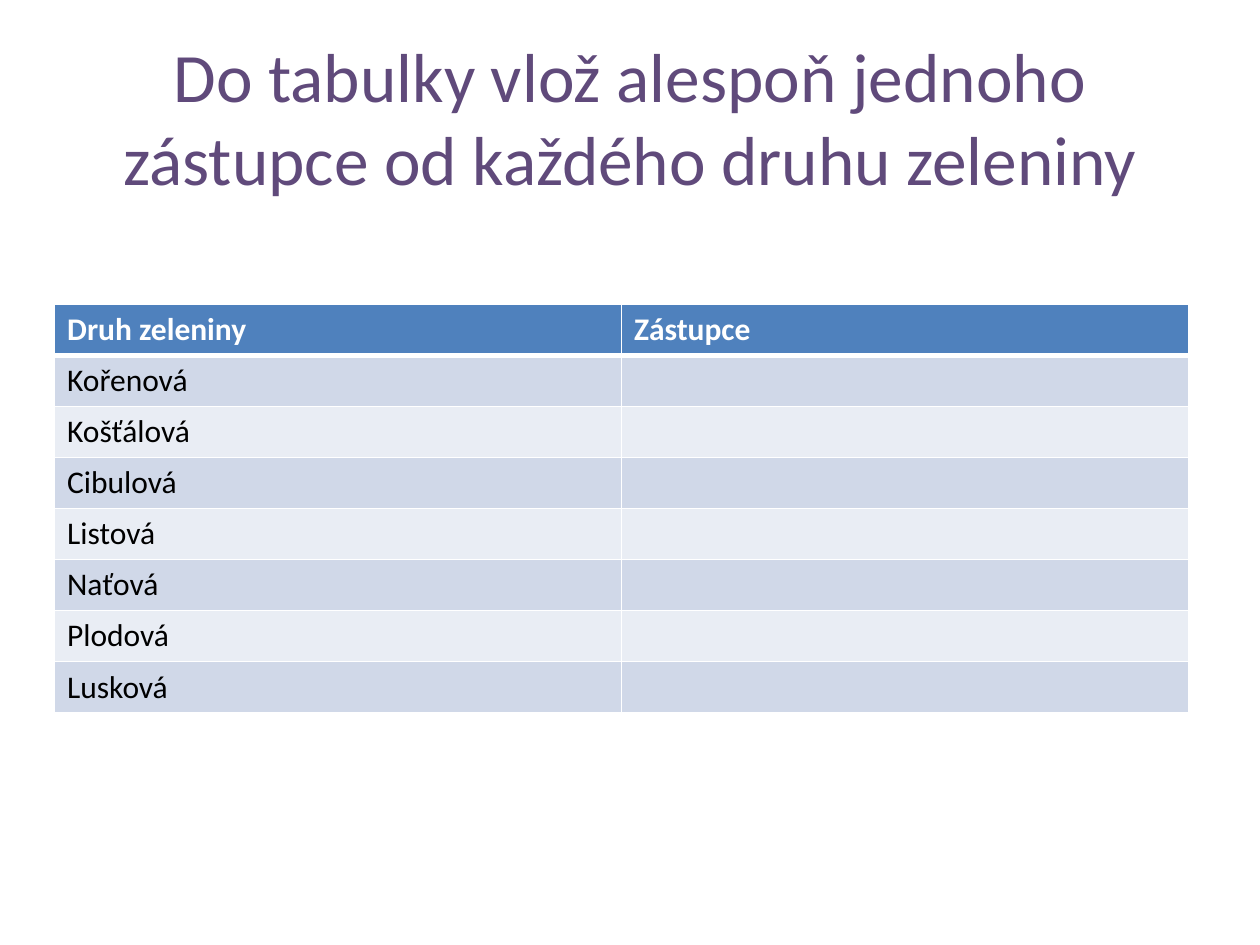
from lxml.etree import SubElement
from pptx import Presentation
from pptx.dml.color import RGBColor
from pptx.enum.text import MSO_ANCHOR, MSO_AUTO_SIZE, PP_ALIGN
from pptx.oxml.ns import qn
from pptx.util import Cm, Pt

PURPLE = RGBColor(0x60, 0x4A, 0x7B)
BLUE = RGBColor(0x4F, 0x81, 0xBD)
BAND_DARK = RGBColor(0xD0, 0xD8, 0xE8)
BAND_LIGHT = RGBColor(0xE9, 0xED, 0xF4)
WHITE = RGBColor(0xFF, 0xFF, 0xFF)
BLACK = RGBColor(0, 0, 0)

TITLE = "Do tabulky vlož alespoň jednoho zástupce od každého druhu zeleniny"
HEADINGS = ("Druh zeleniny", "Zástupce")
KINDS = ("Kořenová", "Košťálová", "Cibulová", "Listová", "Naťová", "Plodová", "Lusková")

TITLE_FONT = {"name": "Calibri", "size": Pt(39.6), "bold": False}
HEADING_FONT = {"name": "Calibri", "size": Pt(18), "bold": True}
BODY_FONT = {**HEADING_FONT, "bold": False}


def apply_format(target, values):
    """Set each named attribute on the target."""
    for name, value in values.items():
        setattr(target, name, value)


def write_text(frame, text, font, color):
    """Fill the first paragraph with one formatted span and return the paragraph."""
    para = frame.paragraphs[0]
    span = para.add_run()
    span.text = text
    apply_format(span.font, font)
    span.font.color.rgb = color
    return para


def add_title(page):
    """Place and format the title placeholder."""
    title = page.shapes.title
    apply_format(title, {"left": Cm(1.27), "top": Cm(0.76),
                         "width": Cm(22.86), "height": Cm(3.18)})
    apply_format(title.text_frame, {"word_wrap": True, "auto_size": MSO_AUTO_SIZE.NONE,
                                    "vertical_anchor": MSO_ANCHOR.MIDDLE})
    para = write_text(title.text_frame, TITLE, TITLE_FONT, PURPLE)
    para.alignment = PP_ALIGN.CENTER


def set_borders(cell, widths):
    """Draw white borders of the given widths on the cell's sides."""
    properties = cell._tc.get_or_add_tcPr()
    for side in ("lnL", "lnR", "lnT", "lnB"):
        line = SubElement(properties, qn(f"a:{side}"), w=str(Pt(widths.get(side, 1))))
        fill = SubElement(line, qn("a:solidFill"))
        SubElement(fill, qn("a:srgbClr"), val=str(WHITE))


def format_cell(cell, text, font, color, background, widths):
    """Give a cell its text, borders and fill."""
    set_borders(cell, widths)
    cell.fill.solid()
    cell.fill.fore_color.rgb = background
    write_text(cell.text_frame, text, font, color)


def add_vegetable_table(page):
    """Add the table of vegetable kinds with an empty column for answers."""
    rows = [HEADINGS] + [(kind, "") for kind in KINDS]
    table = page.shapes.add_table(len(rows), len(HEADINGS), Cm(1.1), Cm(6.13),
                                  Cm(22.86), Cm(1.03 * len(rows))).table
    for row, texts in enumerate(rows):
        if row == 0:
            font, color, background, widths = HEADING_FONT, WHITE, BLUE, {"lnB": 3}
        else:
            font, color = BODY_FONT, BLACK
            background = BAND_DARK if row % 2 else BAND_LIGHT
            widths = {"lnT": 3} if row == 1 else {}
        for column, text in enumerate(texts):
            format_cell(table.cell(row, column), text, font, color, background, widths)


def main():
    """Build and save the deck."""
    deck = Presentation()
    apply_format(deck, {"slide_width": Cm(25.4), "slide_height": Cm(19.05)})
    page = deck.slides.add_slide(deck.slide_layouts[5])
    add_title(page)
    add_vegetable_table(page)
    deck.save("out.pptx")


if __name__ == "__main__":
    main()
